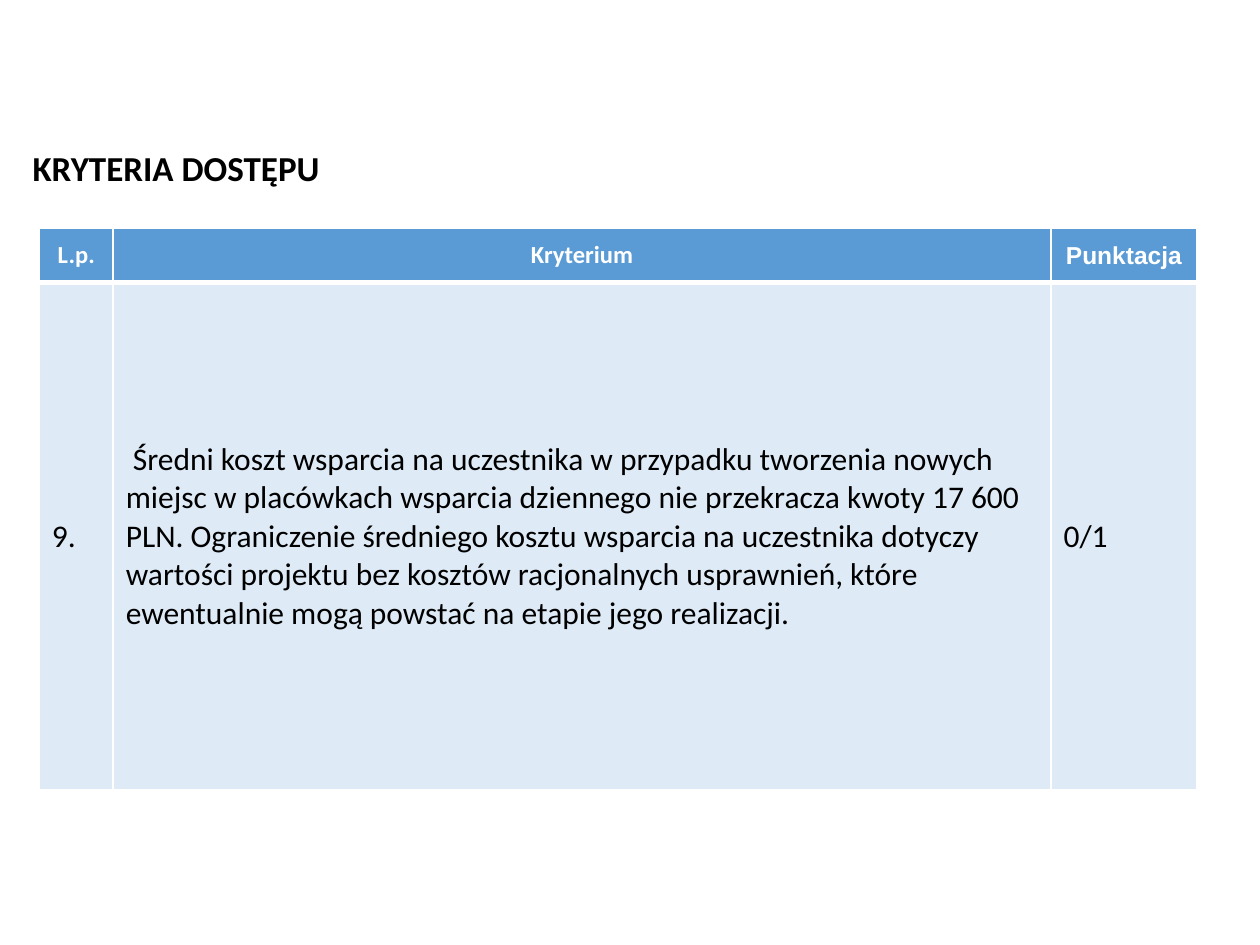
"""Build the access criteria slide with its scoring table."""
from lxml import etree
from pptx import Presentation
from pptx.dml.color import RGBColor
from pptx.enum.text import MSO_ANCHOR, MSO_AUTO_SIZE, PP_ALIGN
from pptx.oxml.ns import qn
from pptx.util import Pt

MIDDLE = MSO_ANCHOR.MIDDLE
LEFT, CENTER = PP_ALIGN.LEFT, PP_ALIGN.CENTER
FIT_SHAPE = MSO_AUTO_SIZE.SHAPE_TO_FIT_TEXT

TITLE = "KRYTERIA DOSTĘPU"
HEADER = ["L.p.", "Kryterium", "Punktacja"]
CRITERION = [
    "9.",
    " Średni koszt wsparcia na uczestnika w przypadku tworzenia nowych miejsc "
    "w placówkach wsparcia dziennego nie przekracza kwoty 17 600 PLN. "
    "Ograniczenie średniego kosztu wsparcia na uczestnika dotyczy wartości "
    "projektu bez kosztów racjonalnych usprawnień, które ewentualnie mogą "
    "powstać na etapie jego realizacji.",
    "0/1",
]
HEADER_FONTS = ["Calibri", "Calibri", "Arial"]
BODY_FONTS = ["Calibri"] * 3

TITLE_FORMAT = {"size": Pt(20), "bold": True}
HEADER_FORMAT = {"size": Pt(14), "bold": True}
BODY_FORMAT = {"size": Pt(18), "bold": False}
WHITE, BLACK = "FFFFFF", "000000"

COLUMN_WIDTHS = [42.2, 535.9, 83.4]
ROWS = [
    {"texts": HEADER, "fonts": HEADER_FONTS, "format": HEADER_FORMAT, "height": 31,
     "color": WHITE, "fill": "5B9BD5", "align": CENTER,
     "borders": {"lnL": 1, "lnR": 1, "lnT": 1, "lnB": 3}},
    {"texts": CRITERION, "fonts": BODY_FONTS, "format": BODY_FORMAT, "height": 290,
     "color": BLACK, "fill": "DEEBF7", "align": LEFT,
     "borders": {"lnL": 1, "lnR": 1, "lnT": 3, "lnB": 1}},
]


def rgb(color):
    """Return the colour for a hex string."""
    return RGBColor.from_string(color)


def write(paragraph, text, font_name, color, values):
    """Put one formatted run in a paragraph."""
    run = paragraph.add_run()
    run.text = text
    run.font.name = font_name
    run.font.color.rgb = rgb(color)
    for name, value in values.items():
        setattr(run.font, name, value)


def add_borders(cell, borders):
    """Draw white cell borders of the given widths."""
    properties = cell._tc.get_or_add_tcPr()
    for tag, width in borders.items():
        line = etree.SubElement(properties, qn(f"a:{tag}"), w=str(Pt(width)))
        fill = etree.SubElement(line, qn("a:solidFill"))
        etree.SubElement(fill, qn("a:srgbClr"), val=WHITE)


def add_title(slide):
    """Add the heading above the table."""
    shape = slide.shapes.add_textbox(Pt(11.5), Pt(80), Pt(186.5), Pt(31.5))
    frame = shape.text_frame
    frame.word_wrap = False
    frame.auto_size = FIT_SHAPE
    frame.vertical_anchor = MIDDLE
    write(frame.paragraphs[0], TITLE, "Calibri", BLACK, TITLE_FORMAT)


def add_criteria_table(slide):
    """Add the table of criteria."""
    width = sum(COLUMN_WIDTHS)
    height = sum(row["height"] for row in ROWS)
    table = slide.shapes.add_table(
        len(ROWS), len(COLUMN_WIDTHS), Pt(22.5), Pt(130.5), Pt(width), Pt(height)
    ).table
    for column, column_width in zip(table.columns, COLUMN_WIDTHS):
        column.width = Pt(column_width)
    for table_row, row in zip(table.rows, ROWS):
        table_row.height = Pt(row["height"])
        for cell, text, font_name in zip(table_row.cells, row["texts"], row["fonts"]):
            add_borders(cell, row["borders"])
            cell.fill.solid()
            cell.fill.fore_color.rgb = rgb(row["fill"])
            cell.vertical_anchor = MIDDLE
            paragraph = cell.text_frame.paragraphs[0]
            paragraph.alignment = row["align"]
            write(paragraph, text, font_name, row["color"], row["format"])


def main():
    """Create and save the presentation."""
    presentation = Presentation()
    presentation.slide_width, presentation.slide_height = Pt(720), Pt(540)
    slide = presentation.slides.add_slide(presentation.slide_layouts[6])
    add_criteria_table(slide)
    add_title(slide)
    presentation.save("out.pptx")


if __name__ == "__main__":
    main()
